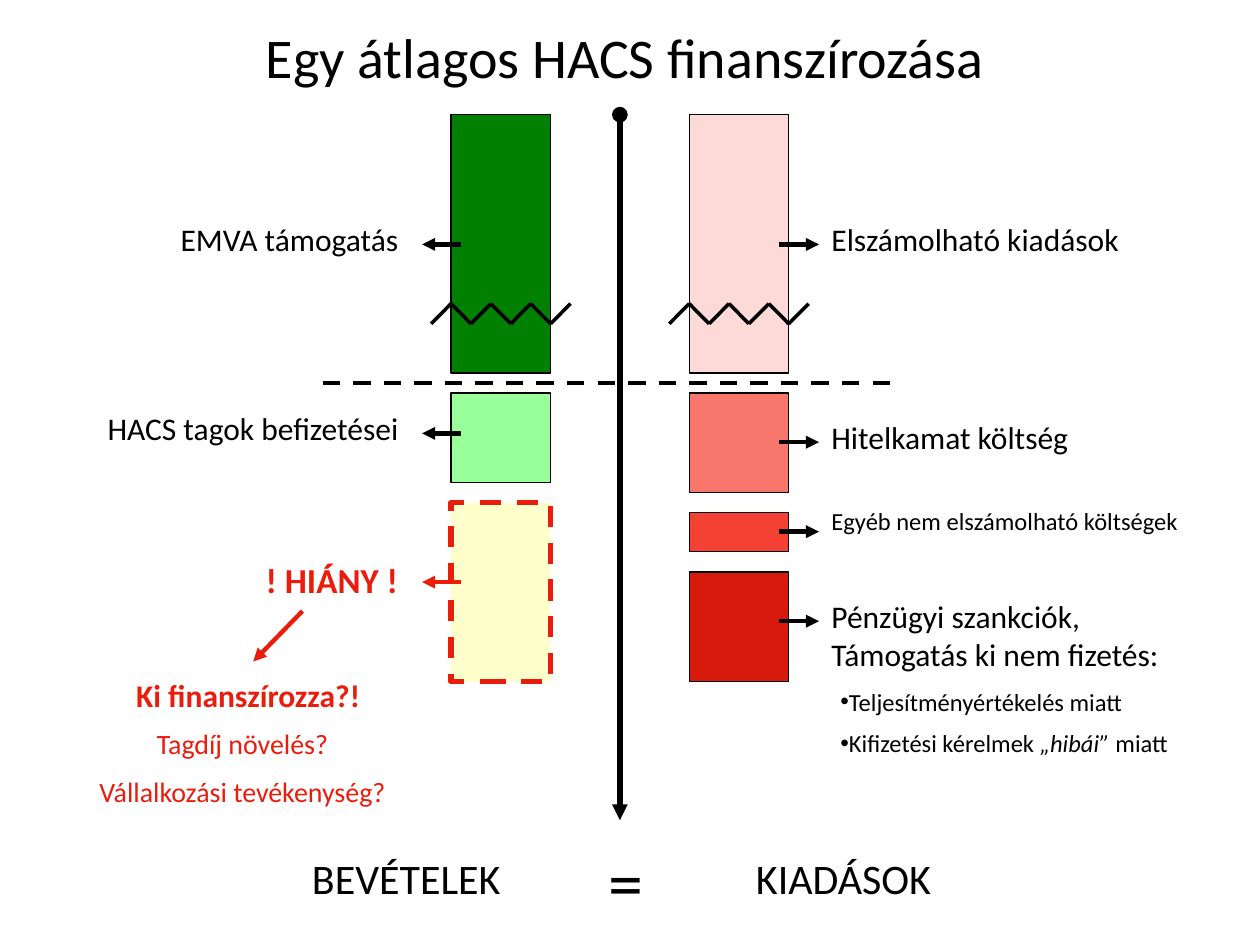
from dataclasses import dataclass
from typing import Optional

from lxml.etree import SubElement
from pptx import Presentation
from pptx.dml.color import RGBColor
from pptx.enum.dml import MSO_LINE
from pptx.enum.shapes import MSO_CONNECTOR, MSO_SHAPE
from pptx.enum.text import MSO_ANCHOR, MSO_AUTO_SIZE, PP_ALIGN
from pptx.oxml.ns import qn
from pptx.util import Inches, Pt


@dataclass(frozen=True)
class Theme:
    font: str = "Calibri"
    black: str = "000000"
    red: str = "EA1C0C"
    title: int = 32
    equals: int = 40
    total: int = 24
    alert: int = 20
    label: int = 18
    question: int = 16
    detail: int = 14


@dataclass(frozen=True)
class Bar:
    left: float
    top: float
    height: float
    fill: str
    line: str = "000000"
    width: float = 0.75
    dash: bool = False


@dataclass(frozen=True)
class Label:
    text: str
    left: float
    top: float
    width: float
    height: float
    size: int = 18
    align: PP_ALIGN = PP_ALIGN.LEFT
    color: str = "000000"
    bold: bool = False


T = Theme()
INCOME_X, COST_X, BAR_W = 3.58, 5.47, 0.79
BAR_TOP = 0.91
LEFT, RIGHT, CENTER = PP_ALIGN.LEFT, PP_ALIGN.RIGHT, PP_ALIGN.CENTER

BARS = [
    Bar(INCOME_X, BAR_TOP, 2.05, "008000"),
    Bar(INCOME_X, 3.12, 0.71, "99FF99"),
    Bar(INCOME_X, 3.99, 1.42, "FFFFCC", T.red, 3, True),
    Bar(COST_X, BAR_TOP, 2.05, "FDDAD7"),
    Bar(COST_X, 3.12, 0.79, "F7776D"),
    Bar(COST_X, 4.07, 0.31, "F54133"),
    Bar(COST_X, 4.54, 0.87, "D71A0B"),
]

LABELS = [
    Label("BEVÉTELEK", 1.61, 6.72, 3.23, 0.5, T.total, CENTER),
    Label("KIADÁSOK", 5.08, 6.72, 3.23, 0.5, T.total, CENTER),
    Label("=", 4.53, 6.61, 0.87, 0.77, T.equals, CENTER),
    Label("EMVA támogatás", 1.06, 1.7, 2.2, 0.4, T.label, RIGHT),
    Label("HACS tagok befizetései", 0.27, 3.2, 2.99, 0.4, T.label, RIGHT),
    Label("! HIÁNY !", 1.06, 4.38, 2.2, 0.43, T.alert, RIGHT, T.red, True),
    Label("Ki finanszírozza?!", 0.59, 5.32, 2.76, 0.4, T.label, CENTER, T.red, True),
    Label("Tagdíj növelés?\nVállalkozási tevékenység?",
          0.43, 5.72, 2.99, 0.77, T.question, CENTER, T.red),
    Label("Elszámolható kiadások", 6.5, 1.7, 2.99, 0.4),
    Label("Hitelkamat költség", 6.5, 3.27, 2.99, 0.4),
    Label("Egyéb nem elszámolható költségek", 6.5, 3.97, 2.99, 0.57, T.detail),
    Label("Pénzügyi szankciók,\vTámogatás ki nem fizetés:", 6.5, 4.69, 3.31, 0.7),
]


def place(sp, left: float, top: float, width: float, height: float) -> None:
    sp.left, sp.top = Inches(left), Inches(top)
    sp.width, sp.height = Inches(width), Inches(height)


def write(sp, text: str, *, size: int, align: PP_ALIGN = LEFT, color: str = T.black,
          bold: bool = False, italic: str = "", bullet: bool = False) -> None:
    """Write one paragraph per line of text; the phrase given as italic is slanted."""
    tf = sp.text_frame
    tf.text = text
    tf.word_wrap = True
    tf.auto_size = MSO_AUTO_SIZE.SHAPE_TO_FIT_TEXT
    tf.vertical_anchor = MSO_ANCHOR.TOP
    for i, p in enumerate(tf.paragraphs):
        p.alignment = align
        p.space_before = Pt(size / 2 if i else 0)
        if italic and italic in p.text:
            before, after = p.text.split(italic)
            p.clear()
            for part in (before, italic, after):
                r = p.add_run()
                r.text = part
                r.font.italic = part == italic
        for r in p.runs:
            r.font.name, r.font.size, r.font.bold = T.font, Pt(size), bold
            r.font.color.rgb = RGBColor.from_string(color)
        if bullet:
            pPr = p._p.get_or_add_pPr()
            pPr.set("marL", "0")
            pPr.set("indent", "0")
            SubElement(pPr, qn("a:buChar")).set("char", "•")


def add_label(s, label: Label) -> None:
    sp = s.shapes.add_textbox(0, 0, 0, 0)
    place(sp, label.left, label.top, label.width, label.height)
    write(sp, label.text, size=label.size, align=label.align,
          color=label.color, bold=label.bold)


def add_bar(s, bar: Bar) -> None:
    sp = s.shapes.add_shape(MSO_SHAPE.RECTANGLE, Inches(bar.left), Inches(bar.top),
                            Inches(BAR_W), Inches(bar.height))
    sp.shadow.inherit = False
    sp.fill.solid()
    sp.fill.fore_color.rgb = RGBColor.from_string(bar.fill)
    sp.line.color.rgb = RGBColor.from_string(bar.line)
    sp.line.width = Pt(bar.width)
    if bar.dash:
        sp.line.dash_style = MSO_LINE.DASH


def add_line(s, x1: float, y1: float, x2: float, y2: float, *, color: str = T.black,
             width: float = 2.5, dash: bool = False, head: Optional[str] = None,
             tail: Optional[str] = None) -> None:
    cx = s.shapes.add_connector(MSO_CONNECTOR.STRAIGHT, Inches(x1), Inches(y1),
                                Inches(x2), Inches(y2))
    cx.line.color.rgb = RGBColor.from_string(color)
    cx.line.width = Pt(width)
    if dash:
        cx.line.dash_style = MSO_LINE.DASH
    spPr = cx._element.spPr
    ln = spPr.find(qn("a:ln"))
    for tag, kind in (("a:headEnd", head), ("a:tailEnd", tail)):
        if kind:
            SubElement(ln, qn(tag)).set("type", kind)
    SubElement(spPr, qn("a:effectLst"))


def add_axis_break(s, bar_left: float) -> None:
    """Draw the zigzag that marks a shortened bar."""
    step = BAR_W / 5
    ys = (2.57, 2.41)
    for i in range(7):
        x = bar_left + (i - 1) * step
        add_line(s, x, ys[i % 2], x + step, ys[(i + 1) % 2], width=2)


def main() -> None:
    prs = Presentation()
    prs.slide_width, prs.slide_height = Inches(10), Inches(7.5)
    s = prs.slides.add_slide(prs.slide_layouts[1])

    title, sanctions = s.placeholders
    place(title, 0.43, 0.13, 9.06, 0.63)
    write(title, "Egy átlagos HACS finanszírozása", size=T.title, align=CENTER)
    place(sanctions, 6.57, 5.4, 2.99, 0.68)
    write(sanctions, "Teljesítményértékelés miatt\nKifizetési kérelmek „hibái” miatt",
          size=T.detail, italic="„hibái”", bullet=True)

    for bar in BARS:
        add_bar(s, bar)
    for label in LABELS:
        add_label(s, label)

    add_line(s, 4.92, BAR_TOP, 4.92, 6.51, width=3, head="oval", tail="triangle")
    add_line(s, 2.56, 3.04, 7.13, 3.04, dash=True)
    for y, color in ((1.94, T.black), (3.44, T.black), (4.62, T.red)):
        add_line(s, 3.66, y, 3.35, y, color=color, tail="triangle")
    for y in (1.94, 3.51, 4.22, 4.93):
        add_line(s, 6.18, y, 6.5, y, tail="triangle")
    add_line(s, 2.4, 4.85, 2.01, 5.25, color=T.red, tail="triangle")
    for left in (INCOME_X, COST_X):
        add_axis_break(s, left)

    prs.save("out.pptx")


if __name__ == "__main__":
    main()
